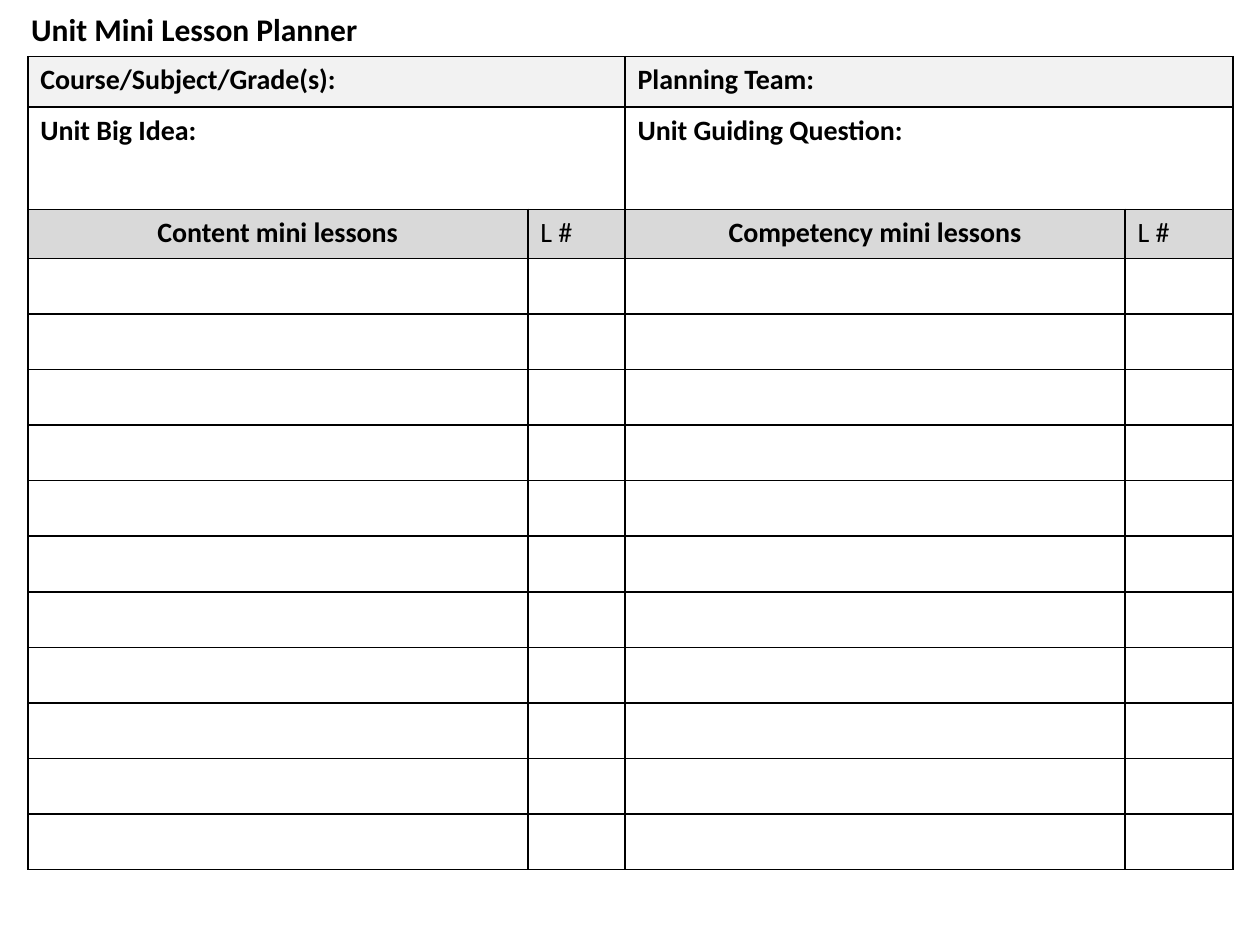
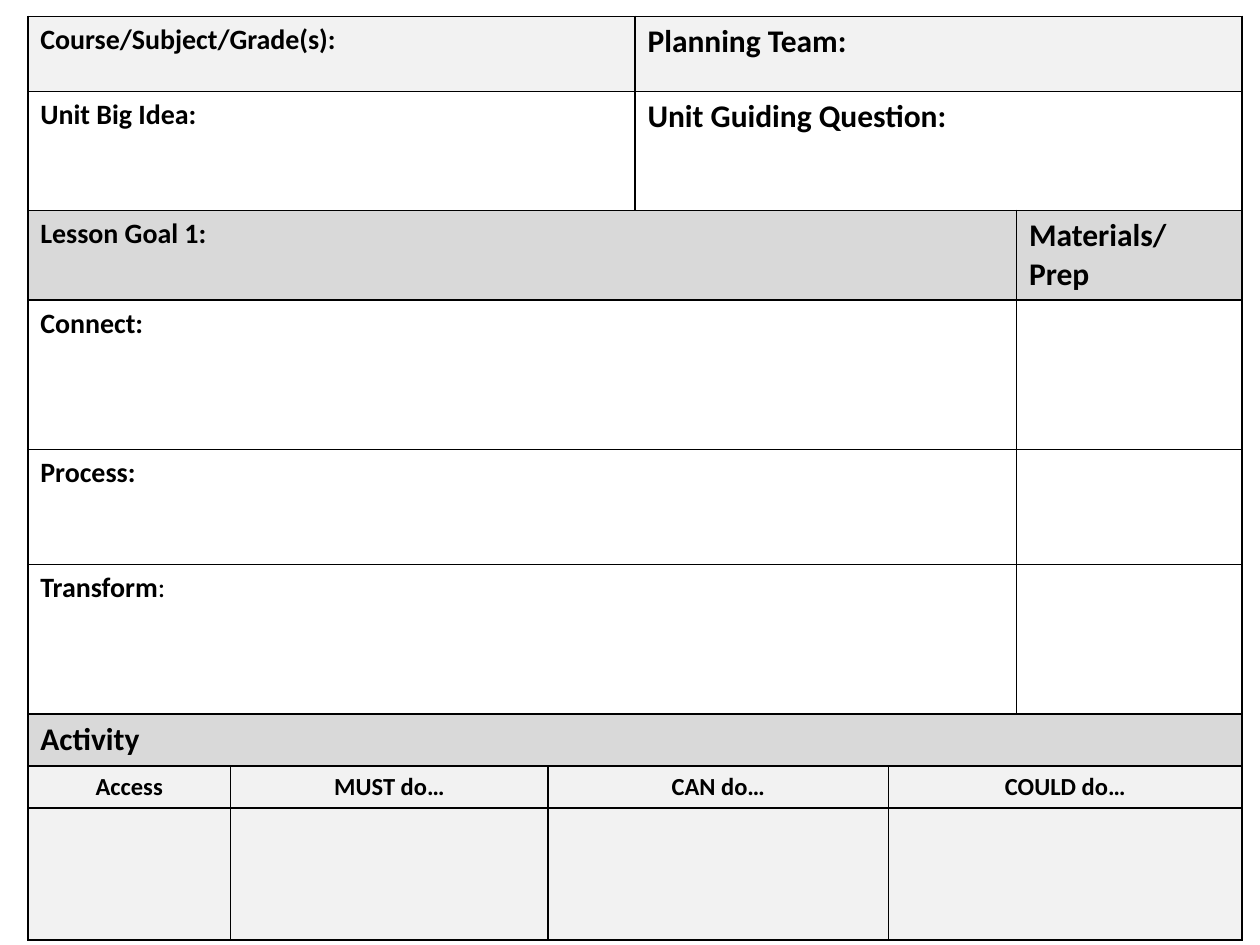
from dataclasses import dataclass

from lxml import etree
from pptx import Presentation
from pptx.dml.color import RGBColor
from pptx.enum.text import MSO_AUTO_SIZE, PP_ALIGN as AL
from pptx.oxml import parse_xml
from pptx.oxml.ns import nsdecls
from pptx.util import Cm, Pt

COLORS = {"ink": "000000", "white": "FFFFFF", "light": "F2F2F2", "mid": "D9D9D9"}
FONT = "Calibri"
LEFT = 0.56


@dataclass
class Entry:
    """Content of one table cell, which may span several columns."""
    text: str = ""
    span: int = 1
    size: int = 16
    bold: bool = True
    align: AL = AL.LEFT
    tail: str = ""


def add_run(p, text, size, bold=True):
    """Add a run of text in the shared font."""
    r = p.add_run()
    r.text = text
    r.font.name, r.font.size, r.font.bold = FONT, Pt(size), bold
    r.font.color.rgb = RGBColor.from_string(COLORS["ink"])


def add_title(s, text):
    """Add the heading above a table."""
    tf = s.shapes.add_textbox(Cm(0.38), Cm(0.08), Cm(7.14), Cm(1.02)).text_frame
    tf.word_wrap = False
    tf.auto_size = MSO_AUTO_SIZE.SHAPE_TO_FIT_TEXT
    add_run(tf.paragraphs[0], text, 18)


def style_cell(cell, fill):
    """Give a cell its fill and a thin border on each side."""
    cell.fill.solid()
    cell.fill.fore_color.rgb = RGBColor.from_string(COLORS[fill])
    tc_pr = cell._tc.get_or_add_tcPr()
    for i, side in enumerate("LRTB"):
        ln = parse_xml(f'<a:ln{side} {nsdecls("a")} w="12700"/>')
        color = etree.SubElement(ln, ln.tag.replace(f"ln{side}", "solidFill"))
        etree.SubElement(color, ln.tag.replace(f"ln{side}", "srgbClr"), val=COLORS["ink"])
        tc_pr.insert(i, ln)


def fill_row(tbl, i, entries):
    """Write the entries of a row, merging cells where they span columns."""
    col = 0
    for e in entries:
        cell = tbl.cell(i, col)
        if e.span > 1:
            cell.merge(tbl.cell(i, col + e.span - 1))
        p = cell.text_frame.paragraphs[0]
        p.alignment = e.align
        if e.text:
            add_run(p, e.text, e.size, e.bold)
        if e.tail:
            add_run(p, e.tail, e.size, False)
        col += e.span


def add_planner(s, top, widths, rows):
    """Add a table from column widths and rows of (height, fill, entries)."""
    height = sum(row[0] for row in rows)
    tbl = s.shapes.add_table(len(rows), len(widths), Cm(LEFT), Cm(top),
                             Cm(sum(widths)), Cm(height)).table
    tbl.first_row = tbl.horz_banding = False
    for column, width in zip(tbl.columns, widths):
        column.width = Cm(width)
    for i, (height, fill, entries) in enumerate(rows):
        tbl.rows[i].height = Cm(height)
        for cell in tbl.rows[i].cells:
            style_cell(cell, fill)
        fill_row(tbl, i, entries)


def unit_rows(heights, span, right_size):
    """Return the two rows that describe the unit."""
    labels = [("light", "Course/Subject/Grade(s):", "Planning Team:"),
              ("white", "Unit Big Idea:", "Unit Guiding Question:")]
    return [(h, fill, [Entry(left, span), Entry(right, span, right_size)])
            for h, (fill, left, right) in zip(heights, labels)]


def build_unit_planner(s):
    """Build the list of mini lessons for the unit."""
    heads = []
    for name in ("Content", "Competency"):
        heads += [Entry(f"{name} mini lessons", align=AL.CENTER), Entry("L #", bold=False)]
    rows = unit_rows((1.02, 2.06), 2, 16) + [(0.99, "mid", heads)]
    rows += [(1.12, "white", [])] * 11
    add_planner(s, 1.14, (10.08, 1.96, 10.08, 2.18), rows)
    add_title(s, "Unit Mini Lesson Planner")


def build_lesson_planner(s):
    """Build the plan for a single lesson."""
    steps = [(3.01, "Connect:", ""), (2.32, "Process:", ""), (3.01, "Transform", ":")]
    levels = [("Access", 1), ("MUST do…", 1), ("CAN do…", 2), ("COULD do…", 2)]
    rows = unit_rows((1.51, 2.4), 3, 18)
    rows.append((1.81, "mid", [Entry("Lesson Goal 1:", 5), Entry("Materials/ Prep", size=18)]))
    rows += [(h, "white", [Entry(text, 5, tail=tail)]) for h, text, tail in steps]
    rows.append((1.05, "mid", [Entry("Activity", 6, 18)]))
    rows.append((0.85, "light", [Entry(text, n, 14, align=AL.CENTER) for text, n in levels]))
    rows.append((2.66, "light", [Entry(span=n) for _, n in levels]))
    add_planner(s, 0.33, (4.09, 6.4, 1.75, 5.11, 2.58, 4.55), rows)


def main():
    """Build and save the planner slides."""
    prs = Presentation()
    prs.slide_width, prs.slide_height = Cm(25.4), Cm(19.05)
    for build in (build_unit_planner, build_lesson_planner):
        build(prs.slides.add_slide(prs.slide_layouts[6]))
    prs.save("out.pptx")


if __name__ == "__main__":
    main()
